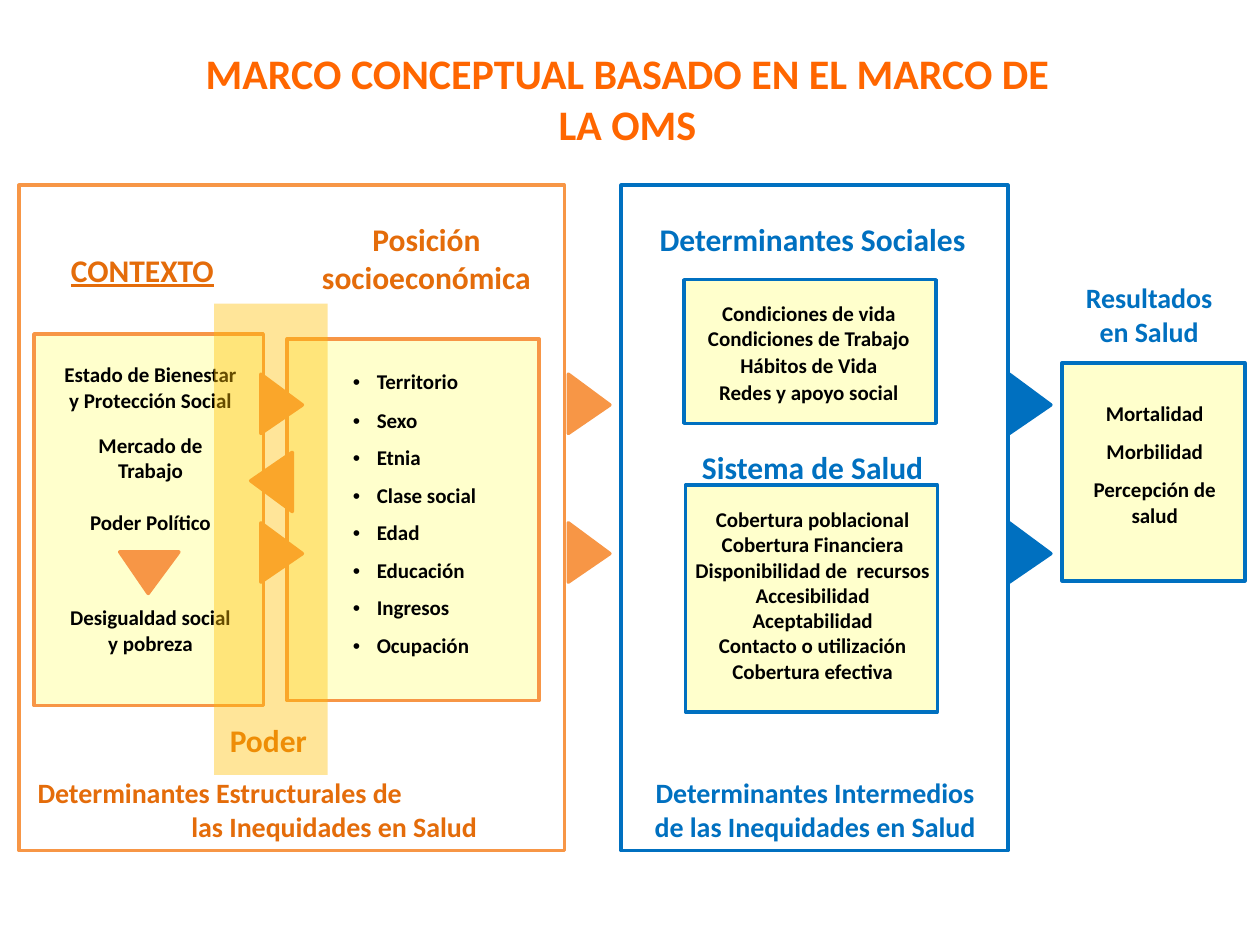
from lxml import etree
from pptx import Presentation
from pptx import util as u
from pptx.dml.color import RGBColor
from pptx.enum import shapes, text
from pptx.oxml.ns import qn

ORANGE = RGBColor(0xF7, 0x96, 0x46)
RUST = RGBColor(0xE4, 0x6C, 0x0A)
BRIGHT = RGBColor(0xFF, 0x66, 0x00)
BLUE = RGBColor(0x00, 0x70, 0xC0)
CREAM = RGBColor(0xFF, 0xFF, 0xCC)
GOLD = RGBColor(0xFF, 0xC0, 0x00)
BLACK = RGBColor(0, 0, 0)
PLAIN = "{2D5ABB26-0587-4C30-8999-92F81FD0307C}"  # table style without grid
CENTER, LEFT = text.PP_ALIGN.CENTER, text.PP_ALIGN.LEFT


class Board:
    """Draws on one slide; lengths are columns and rows of a 100 x 75 grid."""

    font = "Calibri"
    cell = u.Inches(0.1)

    def __init__(self, deck):
        self.slide = deck.slides.add_slide(deck.slide_layouts[5])
        self.shapes = self.slide.shapes

    def grid(self, *marks):
        return [round(mark * self.cell) for mark in marks]

    def style(self, frame, size, color, align=CENTER):
        for para in frame.paragraphs:
            para.alignment = align
            for run in para.runs:
                font = run.font
                font.name, font.size, font.bold = self.font, u.Pt(size), True
                font.color.rgb = color

    def indent(self, para, left, first=0):
        props = para._p.get_or_add_pPr()
        margin, hang = self.grid(left, first)
        props.set("marL", str(margin))
        props.set("indent", str(hang))
        return props

    def title(self, words, box):
        head = self.shapes.title
        head.left, head.top, head.width, head.height = self.grid(*box)
        frame = head.text_frame
        frame.text = words
        frame.vertical_anchor = text.MSO_ANCHOR.TOP
        frame.auto_size = text.MSO_AUTO_SIZE.NONE
        self.style(frame, 24, BRIGHT)

    def label(self, words, box, size, color, align=CENTER):
        frame = self.shapes.add_textbox(*self.grid(*box)).text_frame
        frame.word_wrap = True
        frame.text = words
        self.style(frame, size, color, align)
        return frame

    def shape(self, kind, box, fill=None, line=None):
        item = self.shapes.add_shape(kind, *self.grid(*box))
        item.shadow.inherit = False
        if fill is None:
            item.fill.background()
        else:
            item.fill.solid()
            item.fill.fore_color.rgb = fill
        if line is None:
            item.line.fill.background()
        else:
            item.line.color.rgb = line
            item.line.width = u.Pt(2)
        return item

    def rect(self, box, fill=None, line=None):
        return self.shape(shapes.MSO_SHAPE.RECTANGLE, box, fill, line)

    def veil(self, box, color, share):
        """Adds a see-through rectangle of the given opacity in percent."""
        item = self.rect(box, color)
        tint = item._element.spPr.find(qn("a:solidFill"))[0]
        etree.SubElement(tint, qn("a:alpha")).set("val", str(share * 1000))

    def arrow(self, left, top, turn, color):
        item = self.shape(shapes.MSO_SHAPE.ISOSCELES_TRIANGLE,
                          (left, top, 4.7, 3.3), color, color)
        item.adjustments[0] = 0.52
        item.rotation = turn

    def table(self, left, top, width, rows, bullet=False):
        """Adds a one-column table from (text, height) rows."""
        high = sum(height for _, height in rows)
        frame = self.shapes.add_table(
            len(rows), 1, *self.grid(left, top, width, high))
        table = frame.table
        table.first_row = table.horz_banding = False
        table._tbl.tblPr.find(qn("a:tableStyleId")).text = PLAIN
        for row, (words, height) in zip(table.rows, rows):
            row.height = self.grid(height)[0]
            cell = row.cells[0]
            cell.fill.background()
            cell.margin_left = cell.margin_right = u.Inches(0.05)
            cell.margin_top = cell.margin_bottom = 0
            cell.text_frame.text = words
            self.style(cell.text_frame, 12, BLACK, LEFT if bullet else CENTER)
            if bullet:
                props = self.indent(cell.text_frame.paragraphs[0], 1.9, -1.9)
                etree.SubElement(props, qn("a:buFont")).set("typeface", "Arial")
                etree.SubElement(props, qn("a:buChar")).set("char", "•")


def main():
    deck = Presentation()
    deck.slide_width, deck.slide_height = u.Inches(10), u.Inches(7.5)
    board = Board(deck)
    board.title("MARCO CONCEPTUAL BASADO EN EL MARCO DE LA OMS",
                (14.5, 3.3, 70.6, 9.1))

    # Frames and cards
    for box, color in [((1.5, 14.7, 43.3, 52.8), ORANGE),
                       ((49.3, 14.7, 30.7, 52.8), BLUE)]:
        board.rect(box, line=color)
    for box, color in [((22.8, 26.9, 20, 28.7), ORANGE),
                       ((2.7, 26.5, 18.2, 29.5), ORANGE),
                       ((54.3, 22.2, 20, 11.4), BLUE),
                       ((54.4, 38.5, 20, 18), BLUE),
                       ((84.3, 28.8, 14.5, 17.3), BLUE)]:
        board.rect(box, CREAM, color)

    # Headings
    context = board.label("CONTEXTO", (3.8, 19.4, 15, 4), 18, RUST)
    context.paragraphs[0].runs[0].font.underline = True
    for words, box, size, color in [
            ("Posición socioeconómica", (24, 17, 19.7, 7.1), 18, RUST),
            ("Determinantes Sociales", (50, 17, 29, 4), 18, BLUE),
            ("Sistema de Salud", (50, 35.1, 29, 4), 18, BLUE),
            ("Resultados en Salud", (84.3, 21.8, 13.8, 6.4), 16, BLUE),
            ("Determinantes Intermedios de las Inequidades en Salud",
             (49.8, 61.1, 29.8, 6.4), 16, BLUE),
            ("Poder", (15.5, 56.7, 11.6, 4), 18, RUST)]:
        board.label(words, box, size, color)
    base = board.label(
        "Determinantes Estructurales de\nlas Inequidades en Salud",
        (2, 61.1, 46.3, 6.4), 16, RUST, LEFT)
    board.indent(base.paragraphs[1], 12.2)

    # Lists
    board.table(4.6, 28.8, 14.7, [
        ("Estado de Bienestar y Protección Social", 5.6),
        ("Mercado de Trabajo", 6.1),
        ("Poder Político", 7.6),
        ("Desigualdad social y pobreza", 4.5)])
    traits = ["Sexo", "Etnia", "Clase social", "Edad", "Educación",
              "Ingresos", "Ocupación"]
    board.table(27.5, 29.3, 12.3,
                [("Territorio", 3.1)] + [(trait, 2.98) for trait in traits],
                bullet=True)
    board.table(53, 20.1, 22.4, [
        ("", 3.8),
        ("Condiciones de vida\nCondiciones de Trabajo", 4.2),
        ("Hábitos de Vida", 2.1),
        ("Redes y apoyo social", 2.1)])
    care = ["Cobertura poblacional", "Cobertura Financiera",
            "Disponibilidad de  recursos", "Accesibilidad", "Aceptabilidad",
            "Contacto o utilización", "Cobertura efectiva"]
    board.table(53.9, 40.3, 21.2, [(item, 2) for item in care])
    board.table(85.3, 31.9, 12.7, [
        ("Mortalidad", 3), ("Morbilidad", 3), ("Percepción de salud", 5.9)])

    # Arrows
    for left, color in [(20, ORANGE), (44.4, ORANGE), (79.4, BLUE)]:
        for top in (30.4, 42.2):
            board.arrow(left, top, 90, color)
    board.arrow(19.2, 36.6, 270, ORANGE)
    board.arrow(9.5, 43.8, 180, ORANGE)

    board.veil((17, 24.1, 9, 37.4), GOLD, 40)
    deck.save("out.pptx")


if __name__ == "__main__":
    main()
